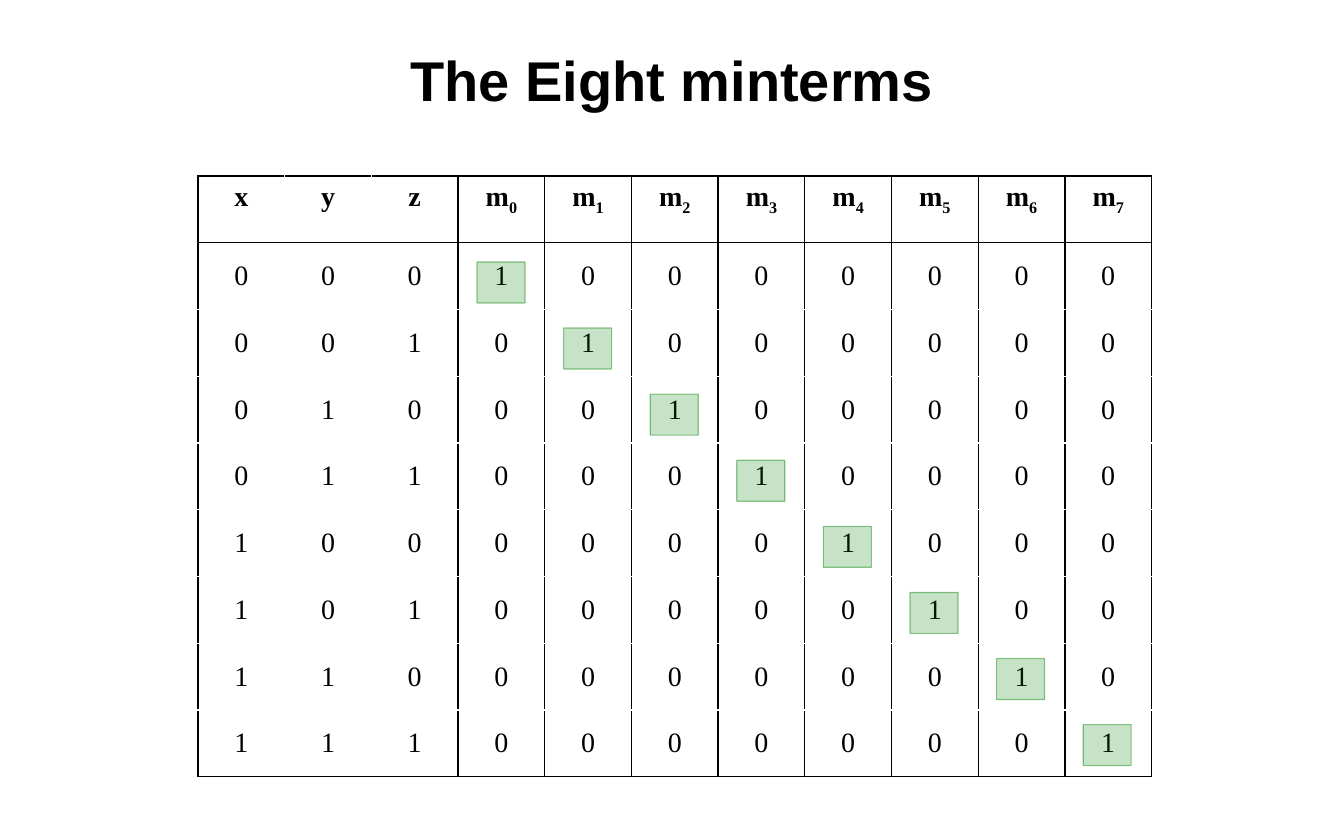
from itertools import product

from lxml.etree import SubElement
from pptx import Presentation
from pptx.dml.color import RGBColor
from pptx.enum.shapes import MSO_SHAPE
from pptx.enum.text import MSO_ANCHOR, PP_ALIGN
from pptx.oxml.ns import qn
from pptx.util import Emu, Pt


def px(n):
    return Emu(round(n * 914400 / 112))


def color(value):
    return RGBColor.from_string(value)


def set_alpha(fill_xml, percent):
    clr = fill_xml.find(".//" + qn("a:srgbClr"))
    SubElement(clr, qn("a:alpha"), val=str(percent * 1000))


def add_text(p, text, font="Times New Roman", size=18, bold=False, fill="000000", baseline=None):
    p.alignment = PP_ALIGN.CENTER
    r = p.add_run()
    r.text = text
    r.font.name = font
    r.font.size = Pt(size)
    r.font.bold = bold
    r.font.color.rgb = color(fill)
    if baseline is not None:
        r.font._element.set("baseline", str(baseline * 1000))


class Deck:
    ink = "000000"
    paper = "FFFFFF"
    accent = "008000"

    def __init__(self, width, height):
        self.prs = Presentation()
        self.prs.slide_width, self.prs.slide_height = px(width), px(height)
        self.s = None

    def slide(self):
        self.s = self.prs.slides.add_slide(self.prs.slide_layouts[5])
        self.s.background.fill.solid()
        self.s.background.fill.fore_color.rgb = color(self.paper)

    def title(self, text, x, y, w, h):
        sp = self.s.shapes.title
        sp.left, sp.top, sp.width, sp.height = px(x), px(y), px(w), px(h)
        tf = sp.text_frame
        tf.vertical_anchor = MSO_ANCHOR.MIDDLE
        add_text(tf.paragraphs[0], text, font="Arial", size=36, bold=True)

    def borders(self, cell, **sides):
        tc_pr = cell._tc.get_or_add_tcPr()
        for side in "LRTB":
            ln = SubElement(tc_pr, qn("a:ln" + side), w=str(Pt(1)))
            fill = SubElement(ln, qn("a:solidFill"))
            SubElement(fill, qn("a:srgbClr"), val=self.ink if sides[side] else self.paper)

    def table(self, rows, inputs, x, y, w, h):
        n_rows, n_cols = len(rows), len(rows[0])
        table = self.s.shapes.add_table(n_rows, n_cols, px(x), px(y), px(w), px(h)).table
        table.first_row = table.horz_banding = False
        for col in table.columns:
            col.width = px(w / n_cols)
        for row in table.rows:
            row.height = px(h / n_rows)
        for i, j in product(range(n_rows), range(n_cols)):
            cell, header = table.cell(i, j), i == 0
            self.borders(cell, L=j == 0 or j >= inputs, R=j >= inputs - 1,
                         T=i <= 1, B=header or i == n_rows - 1)
            p = cell.text_frame.paragraphs[0]
            name, sub = rows[i][j][:1], rows[i][j][1:]
            add_text(p, name, bold=header)
            if sub:
                add_text(p, sub, bold=header, baseline=-25)
            if header:
                cell.vertical_anchor = MSO_ANCHOR.TOP
                cell.fill.solid()
                cell.fill.fore_color.rgb = color(self.paper)
            else:
                cell.vertical_anchor = MSO_ANCHOR.MIDDLE
                cell.fill.background()

    def highlight(self, x, y, w, h):
        sp = self.s.shapes.add_shape(MSO_SHAPE.RECTANGLE, px(x), px(y), px(w), px(h))
        sp.shadow.inherit = False
        sp.fill.solid()
        sp.fill.fore_color.rgb = color(self.accent)
        sp.line.color.rgb = color(self.accent)
        sp.line.width = Pt(0.75)
        set_alpha(sp._element.spPr.find(qn("a:solidFill")), 22)
        set_alpha(sp._element.spPr.find(qn("a:ln")), 43)


def main():
    deck = Deck(1344, 840)
    deck.slide()
    deck.title("The Eight minterms", 0, 37, 1344, 84)
    header = ["x", "y", "z"] + [f"m{k}" for k in range(8)]
    body = [list(f"{n:03b}") + [str(int(n == k)) for k in range(8)] for n in range(8)]
    deck.table([header] + body, 3, 198, 176, 954, 601)
    for k in range(8):
        deck.highlight(477 + 86.6 * k, 262 + 66.1 * k, 48, 41)
    deck.prs.save("out.pptx")


if __name__ == "__main__":
    main()
